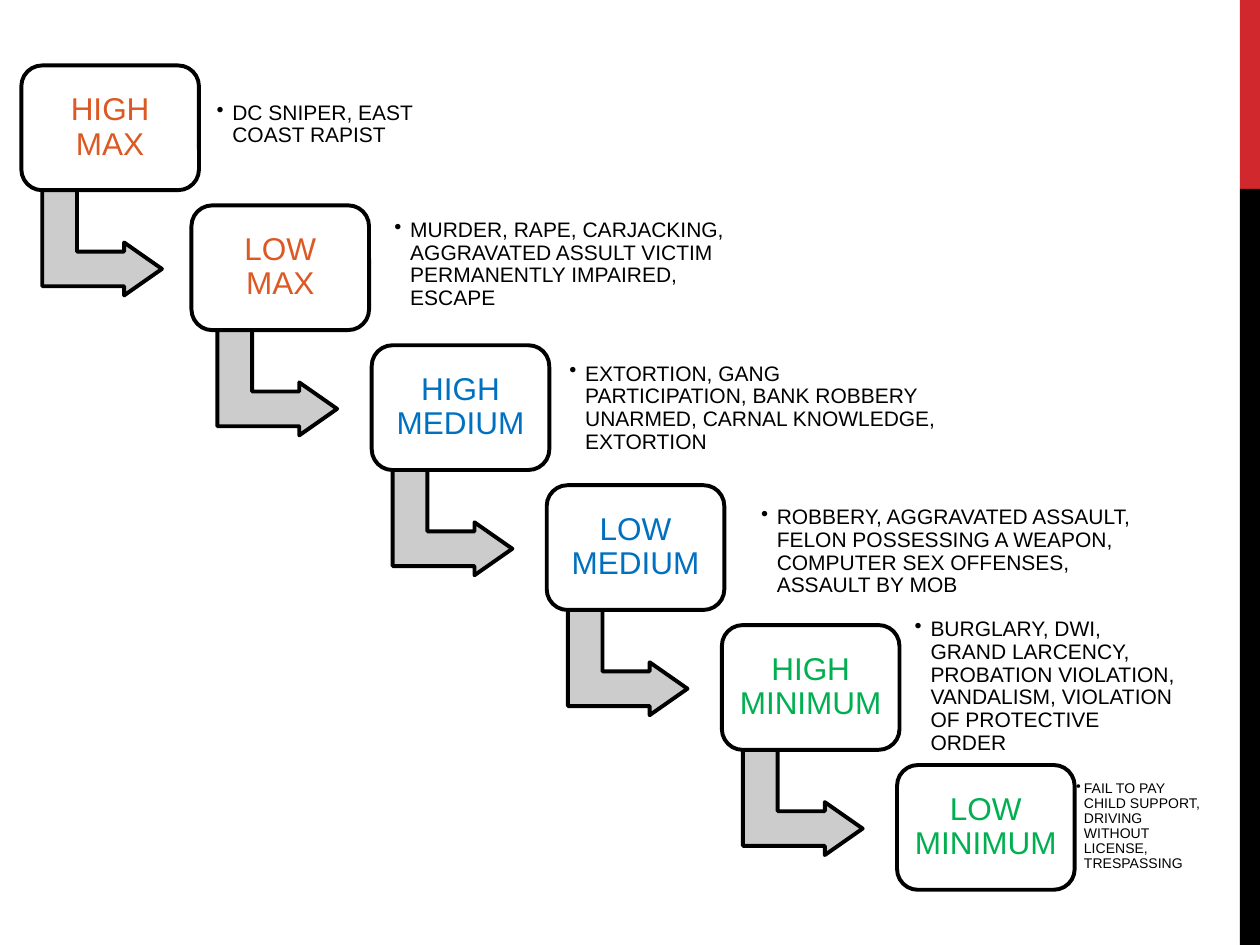
from typing import NamedTuple

from lxml import etree
from pptx import Presentation
from pptx.dml.color import RGBColor
from pptx.enum.shapes import MSO_SHAPE
from pptx.enum.text import MSO_ANCHOR, PP_ALIGN
from pptx.oxml.ns import qn
from pptx.util import Pt

RECTANGLE = MSO_SHAPE.RECTANGLE
ROUNDED = MSO_SHAPE.ROUNDED_RECTANGLE
BENT_ARROW = MSO_SHAPE.BENT_UP_ARROW
MIDDLE = MSO_ANCHOR.MIDDLE
LEFT, CENTER = PP_ALIGN.LEFT, PP_ALIGN.CENTER

FONT = "Arial"
BLACK, WHITE, GRAY, RED = "000000", "FFFFFF", "CCCCCC", "D1282E"
ORANGE, BLUE, GREEN = "DC5924", "0070C0", "00B050"

STEP_X, STEP_Y = 100.1, 79.95
FIRST_BOX_TOP = 37.4
BOX_WIDTH, BOX_HEIGHT = 101.5, 71.3
FIRST_ARROW_LEFT, FIRST_ARROW_TOP = 28.1, 104.4
ARROW_WIDTH, ARROW_HEIGHT = 60.5, 68.4
NOTE_HEIGHT = 57.6


class Box(NamedTuple):
    left: float
    top: float
    width: float
    height: float


class Level(NamedTuple):
    name: str
    color: str
    left: float
    offenses: str
    note_left: float
    note_top: float
    note_width: float
    note_size: float = 12
    note_inset: float = 3.6
    note_indent: float = 9


LEVELS = [
    Level("HIGH MAX", ORANGE, 12.2, "DC SNIPER, EAST COAST RAPIST", 120.2, 42.5, 139.7),
    Level("LOW MAX", ORANGE, 109.4,
          "MURDER, RAPE, CARJACKING, AGGRAVATED ASSULT VICTIM PERMANENTLY IMPAIRED, ESCAPE",
          221.8, 122.4, 200.2),
    Level("HIGH MEDIUM", BLUE, 212.4,
          "EXTORTION, GANG PARTICIPATION, BANK ROBBERY UNARMED, CARNAL KNOWLEDGE, EXTORTION",
          321.8, 204.5, 220.3),
    Level("LOW MEDIUM", BLUE, 312.4,
          "ROBBERY, AGGRAVATED ASSAULT, FELON POSSESSING A WEAPON, COMPUTER SEX OFFENSES, "
          "ASSAULT BY MOB", 431.3, 286.6, 225.4),
    Level("HIGH MINIMUM", GREEN, 412.5,
          "BURGLARY, DWI, GRAND LARCENY, PROBATION VIOLATION, VANDALISM, VIOLATION OF "
          "PROTECTIVE ORDER".replace("LARCENY", "LARCENCY"), 519.1, 363.6, 157.7),
    Level("LOW MINIMUM", GREEN, 512.6,
          "FAIL TO PAY CHILD SUPPORT, DRIVING WITHOUT LICENSE, TRESPASSING",
          612, 443.5, 77.8, note_size=8, note_inset=2.9, note_indent=4.5),
]
# The misspelled words are kept as they are worded on the slide.


def rgb(color: str) -> RGBColor:
    return RGBColor.from_string(color)


def add_shape(slide, kind, box: Box, fill: str, line: str | None = None):
    shape = slide.shapes.add_shape(kind, *map(Pt, box))
    shape.shadow.inherit = False
    shape.fill.solid()
    shape.fill.fore_color.rgb = rgb(fill)
    if line is None:
        shape.line.fill.background()
    else:
        shape.line.color.rgb = rgb(line)
        shape.line.width = Pt(2.25)
    return shape


def write_text(shape, text: str, *, size: float, color: str, inset: float,
               align=LEFT, bullet_indent: float = 0) -> None:
    frame = shape.text_frame
    frame.word_wrap = True
    frame.vertical_anchor = MIDDLE
    frame.margin_left = frame.margin_right = Pt(inset)
    frame.margin_top = frame.margin_bottom = Pt(inset)
    paragraph = frame.paragraphs[0]
    paragraph.alignment = align
    paragraph.line_spacing = 0.9
    run = paragraph.add_run()
    run.text = text
    run.font.name = FONT
    run.font.size = Pt(size)
    run.font.color.rgb = rgb(color)
    if bullet_indent:
        properties = paragraph._p.get_or_add_pPr()
        properties.set("marL", str(Pt(bullet_indent)))
        properties.set("indent", str(-Pt(bullet_indent)))
        etree.SubElement(properties, qn("a:buChar")).set("char", "•")


def add_arrow(slide, index: int) -> None:
    """Add the bent arrow that leads from one level to the next."""
    box = Box(FIRST_ARROW_LEFT + index * STEP_X, FIRST_ARROW_TOP + index * STEP_Y,
              ARROW_WIDTH, ARROW_HEIGHT)
    arrow = add_shape(slide, BENT_ARROW, box, GRAY, BLACK)
    arrow.rotation = 90
    for number, value in enumerate((0.328, 0.25, 0.358)):
        arrow.adjustments[number] = value


def add_level(slide, index: int, level: Level) -> None:
    box = Box(level.left, FIRST_BOX_TOP + index * STEP_Y, BOX_WIDTH, BOX_HEIGHT)
    shape = add_shape(slide, ROUNDED, box, WHITE, BLACK)
    write_text(shape, level.name, size=18, color=level.color, inset=5.4, align=CENTER)

    note_box = Box(level.note_left, level.note_top, level.note_width, NOTE_HEIGHT)
    note = slide.shapes.add_textbox(*map(Pt, note_box))
    write_text(note, level.offenses, size=level.note_size, color=BLACK,
               inset=level.note_inset, bullet_indent=level.note_indent)


def main() -> None:
    presentation = Presentation()
    presentation.slide_width, presentation.slide_height = Pt(720), Pt(540)
    slide = presentation.slides.add_slide(presentation.slide_layouts[6])
    add_shape(slide, RECTANGLE, Box(708.5, 0, 11.5, 108), RED)
    add_shape(slide, RECTANGLE, Box(708.5, 108, 11.5, 432), BLACK)
    for index, level in enumerate(LEVELS):
        if index < len(LEVELS) - 1:
            add_arrow(slide, index)
        add_level(slide, index, level)
    presentation.save("out.pptx")


if __name__ == "__main__":
    main()
